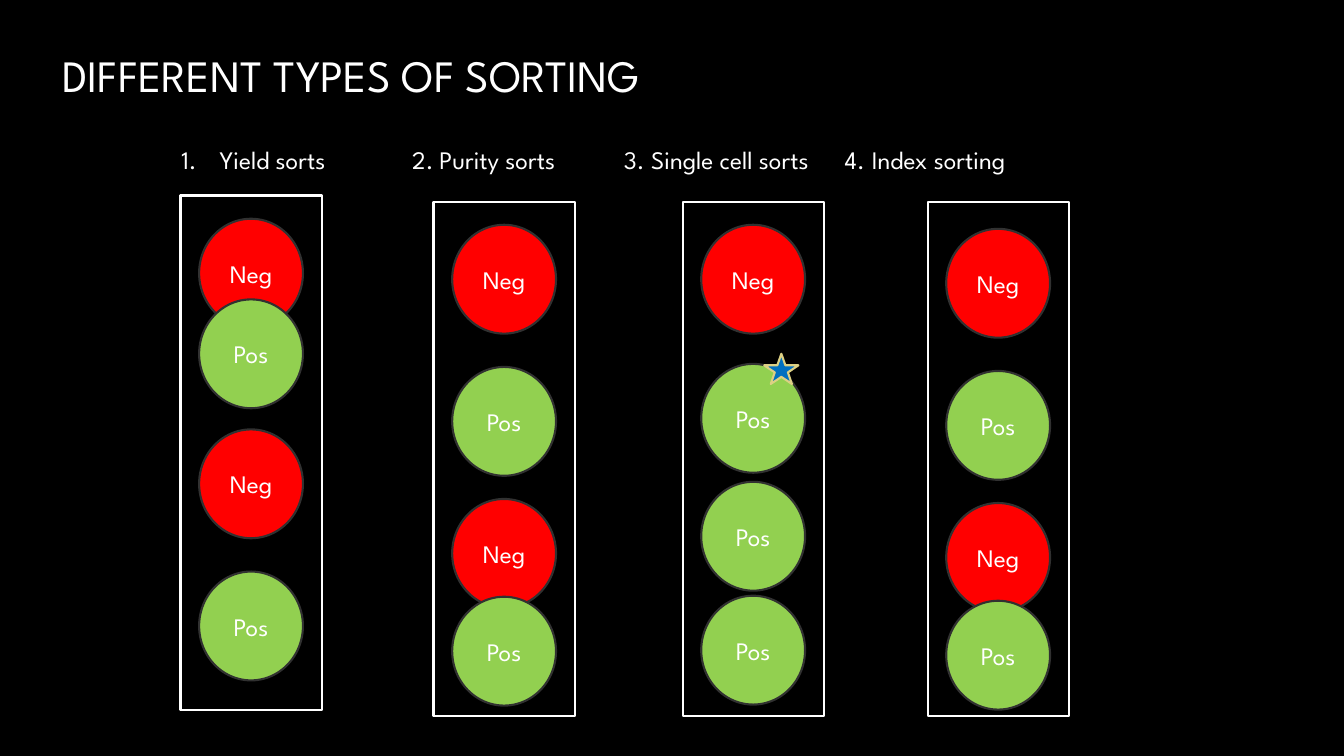
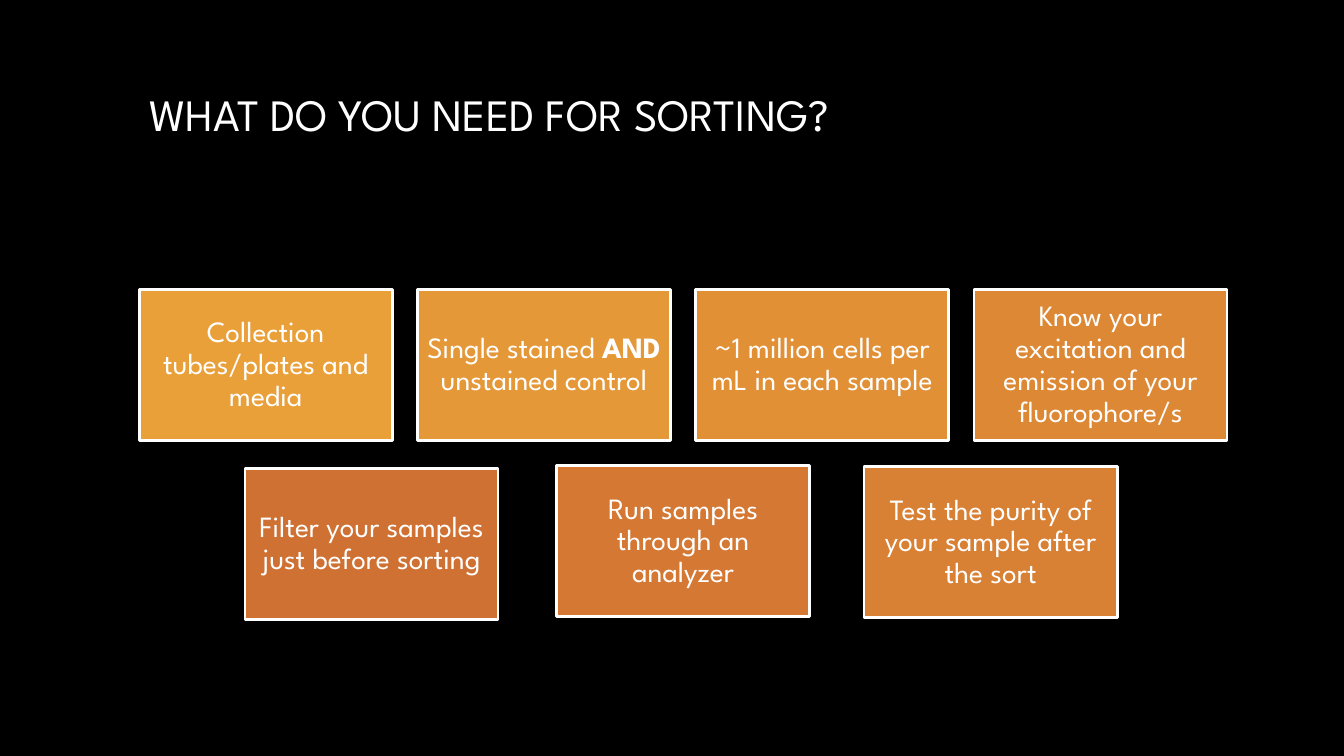
"""Build two slides on cell sorting: the types of sorting and what is needed for it."""
from pptx import Presentation
from pptx.dml.color import RGBColor
from pptx.enum.shapes import MSO_SHAPE
from pptx.enum.text import MSO_ANCHOR, PP_ALIGN
from pptx.util import Inches, Pt
from lxml.etree import SubElement
from pptx.oxml.ns import qn

FONT = "League Spartan"
BLACK = RGBColor(0x00, 0x00, 0x00)
WHITE = RGBColor(0xFF, 0xFF, 0xFF)
CELL_EDGE = RGBColor(0x31, 0x31, 0x31)
STAR_BLUE = RGBColor(0x00, 0x70, 0xC0)
STAR_EDGE = RGBColor(0xDC, 0xD0, 0x84)
CELL_COLORS = {"Neg": RGBColor(0xFF, 0x00, 0x00), "Pos": RGBColor(0x92, 0xD0, 0x50)}

TUBE_WIDTH, TUBE_HEIGHT = 1.4, 5.1
CELL_WIDTH, CELL_HEIGHT = 1.03, 1.08
CARD_WIDTH, CARD_HEIGHT = 2.51, 1.5

TUBES = [
    ("Yield sorts", 1.7, 0.38, 1.79, 1.94,
     [("Neg", 2.17), ("Pos", 2.97), ("Neg", 4.26), ("Pos", 5.67)]),
    ("Purity sorts", 3.99, 0.27, 4.3, 2,
     [("Neg", 2.23), ("Pos", 3.64), ("Neg", 4.95), ("Pos", 5.92)]),
    ("Single cell sorts", 6.09, 0.27, 6.77, 2,
     [("Neg", 2.23), ("Pos", 3.61), ("Pos", 4.78), ("Pos", 5.91)]),
    ("Index sorting", 8.28, 0.27, 9.2, 2,
     [("Neg", 2.27), ("Pos", 3.68), ("Neg", 4.99), ("Pos", 5.96)]),
]

TOP_CARDS = [
    (["Collection tubes/plates and media"], RGBColor(0xE9, 0xA0, 0x39)),
    (["Single stained ", "AND", " unstained control"], RGBColor(0xE5, 0x98, 0x38)),
    (["~1 million cells per mL in each sample"], RGBColor(0xE1, 0x90, 0x36)),
    (["Know your excitation and emission of your fluorophore/s"], RGBColor(0xDD, 0x88, 0x35)),
]
BOTTOM_CARDS = [
    (2.43, 4.65, ["Filter your samples just before sorting"], RGBColor(0xCF, 0x71, 0x33)),
    (5.52, 4.62, ["Run samples through an analyzer"], RGBColor(0xD4, 0x78, 0x34)),
    (8.57, 4.63, ["Test the purity of your sample after the sort"], RGBColor(0xD8, 0x80, 0x34)),
]


def add_text(shape, texts, size, align=PP_ALIGN.LEFT, anchor=MSO_ANCHOR.MIDDLE):
    frame = shape.text_frame
    frame.word_wrap = True
    frame.vertical_anchor = anchor
    paragraph = frame.paragraphs[0]
    paragraph.alignment = align
    paragraph.font.name = FONT
    paragraph.font.size = Pt(size)
    paragraph.font.color.rgb = WHITE
    for text in texts:
        run = paragraph.add_run()
        run.text = text
        if text == "AND":
            run.font.bold = True
    return paragraph


def add_box(slide, kind, left, top, width, height, fill, line, weight=1.5):
    shape = slide.shapes.add_shape(
        kind, Inches(left), Inches(top), Inches(width), Inches(height))
    shape.shadow.inherit = False
    shape.fill.solid()
    shape.fill.fore_color.rgb = fill
    shape.line.color.rgb = line
    shape.line.width = Pt(weight)
    return shape


presentation = Presentation()
presentation.slide_width = Inches(13.33)
presentation.slide_height = Inches(7.5)

slides = []
for title, left, top, width, height in [
    ("DIFFERENT TYPES OF SORTING", 0.52, 0.25, 10.6, 0.98),
    ("WHAT DO YOU NEED FOR SORTING?", 1.38, 0.4, 10.78, 1.45),
]:
    slide = presentation.slides.add_slide(presentation.slide_layouts[6])
    slide.background.fill.solid()
    slide.background.fill.fore_color.rgb = BLACK
    title_box = slide.shapes.add_textbox(
        Inches(left), Inches(top), Inches(width), Inches(height))
    add_text(title_box, [title], 32)
    slides.append(slide)
types_slide, needs_slide = slides

for number, (label, label_left, indent, left, top, cells) in enumerate(TUBES, start=1):
    label_box = types_slide.shapes.add_textbox(
        Inches(label_left), Inches(1.38), Inches(2.2), Inches(0.4))
    paragraph = add_text(label_box, [label], 18, anchor=MSO_ANCHOR.TOP)
    properties = paragraph.font._element.getparent()
    properties.set("marL", str(Inches(indent)))
    properties.set("indent", str(-Inches(indent)))
    numbering = SubElement(properties, qn("a:buAutoNum"), type="arabicPeriod", startAt=str(number))
    properties.insert(0, numbering)

    add_box(types_slide, MSO_SHAPE.RECTANGLE, left, top, TUBE_WIDTH, TUBE_HEIGHT, BLACK, WHITE)
    cell_left = left + (TUBE_WIDTH - CELL_WIDTH) / 2
    for kind, cell_top in cells:
        cell = add_box(types_slide, MSO_SHAPE.OVAL, cell_left, cell_top,
                       CELL_WIDTH, CELL_HEIGHT, CELL_COLORS[kind], CELL_EDGE)
        add_text(cell, [kind], 18, PP_ALIGN.CENTER)

add_box(types_slide, MSO_SHAPE.STAR_5_POINT, 7.58, 3.51, 0.34, 0.3, STAR_BLUE, STAR_EDGE)

top_row = [(1.38 + 2.76 * index, 2.87, *card) for index, card in enumerate(TOP_CARDS)]
for left, top, texts, color in top_row + BOTTOM_CARDS:
    card = add_box(needs_slide, MSO_SHAPE.RECTANGLE, left, top,
                   CARD_WIDTH, CARD_HEIGHT, color, WHITE, 2)
    frame = card.text_frame
    frame.margin_left = frame.margin_right = Inches(0.09)
    frame.margin_top = frame.margin_bottom = Inches(0.09)
    paragraph = add_text(card, texts, 21, PP_ALIGN.CENTER)
    paragraph.line_spacing = 0.9

presentation.save("out.pptx")
